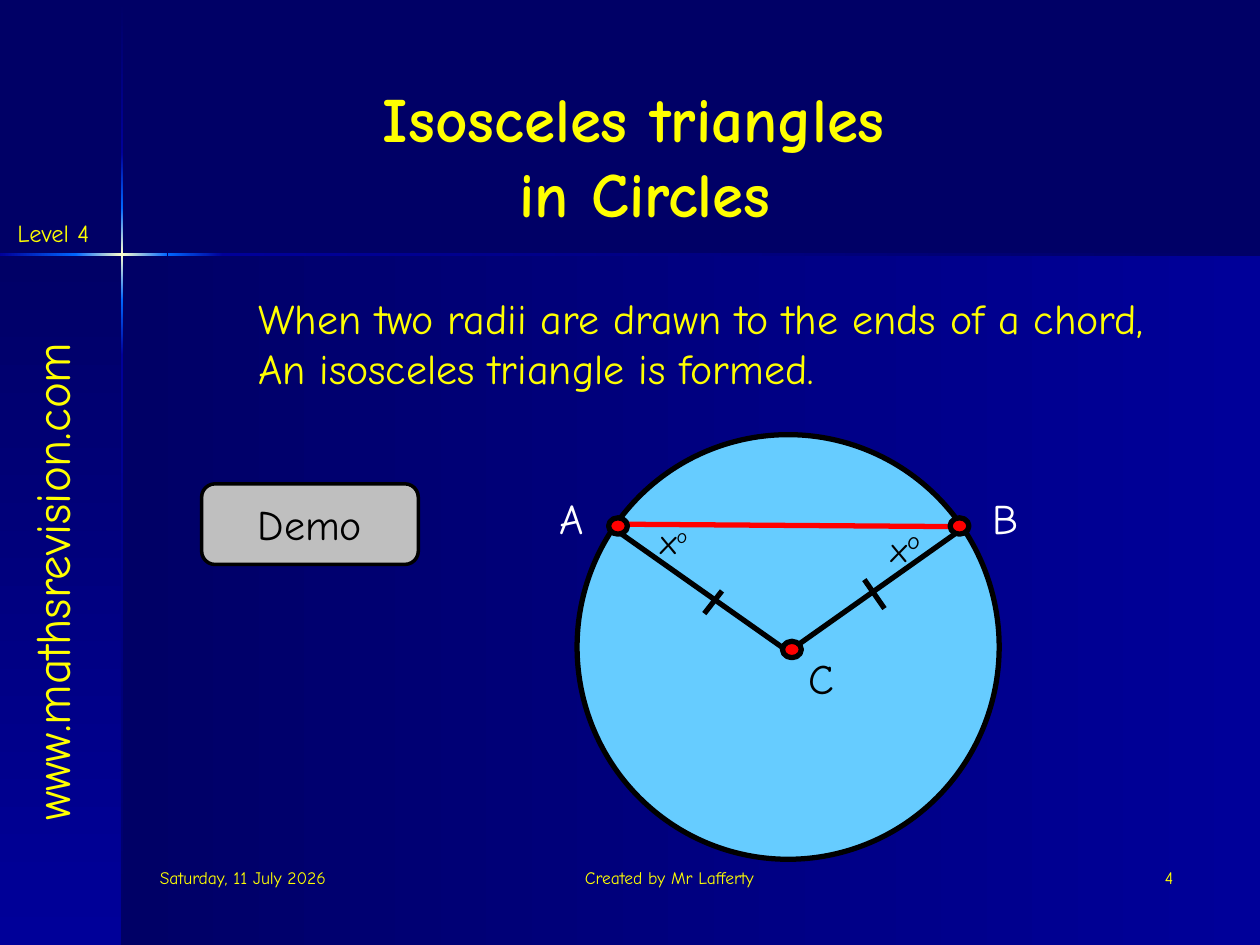
import copy

import pptx
import pptx.dml.color
import pptx.enum.shapes
import pptx.enum.text
import pptx.oxml
import pptx.oxml.ns
import pptx.util
from pptx.util import Inches

FONT = "Comic Neue"
YELLOW, BLACK, WHITE, RED = "FFFF00", "000000", "FFFFFF", "FF0000"
NAVY, BLUE, BRIGHT, GLOW = "000066", "000099", "0066FF", "FFFFCC"
SHAPES = pptx.enum.shapes.MSO_SHAPE
ALIGN = pptx.enum.text.PP_ALIGN
ANCHOR = pptx.enum.text.MSO_ANCHOR
AUTO_SIZE = pptx.enum.text.MSO_AUTO_SIZE


def rgb(value):
    return pptx.dml.color.RGBColor.from_string(value)


def write(shape, text, size, color, align=ALIGN.LEFT, wrap=True, bold=False):
    """Fill a shape with text and format every run alike."""
    frame = shape.text_frame
    frame.text = text
    frame.word_wrap = wrap
    frame.auto_size = AUTO_SIZE.NONE if wrap else AUTO_SIZE.SHAPE_TO_FIT_TEXT
    for para in frame.paragraphs:
        para.alignment = align
        for span in para.runs:
            span.font.name = FONT
            span.font.size = pptx.util.Pt(size)
            span.font.bold = bold
            span.font.color.rgb = rgb(color)


deck = pptx.Presentation()
deck.slide_width, deck.slide_height = Inches(10), Inches(7.5)
page = deck.slides.add_slide(deck.slide_layouts[5])
page.background.fill.solid()
page.background.fill.fore_color.rgb = rgb(NAVY)

# Gradient panels, then the glowing cross: left, top, width, height, angle, colours
ACROSS, DOWN = 0, 90
bands = [
    (0.97, 2.02, 9.03, 5.48, ACROSS, [NAVY, BLUE]),
    (0, 2.02, 0.97, 5.48, DOWN, [NAVY, BLUE]),
    (0.96, 0.01, 0.02, 1.21, DOWN, [NAVY, BLUE]),
    (0.96, 2.82, 0.02, 4.68, DOWN, [BLUE, NAVY]),
    (1.77, 2.01, 8.23, 0.02, ACROSS, [BLUE, NAVY]),
    (0.96, 2.38, 0.02, 0.44, DOWN, [BRIGHT, BLUE]),
    (0.96, 1.21, 0.02, 0.44, DOWN, [BLUE, BRIGHT]),
    (0.96, 1.65, 0.02, 0.73, DOWN, [BRIGHT, GLOW, BRIGHT]),
    (0, 2.01, 0.61, 0.02, ACROSS, [BLUE, BRIGHT]),
    (1.33, 2.01, 0.44, 0.02, ACROSS, [BRIGHT, BLUE]),
    (0.6, 2.01, 0.73, 0.02, ACROSS, [BRIGHT, GLOW, BRIGHT]),
]
for left, top, width, height, angle, colors in bands:
    band = page.shapes.add_shape(
        SHAPES.RECTANGLE, Inches(left), Inches(top), Inches(width), Inches(height))
    band.shadow.inherit = False
    band.line.fill.background()
    band.fill.gradient()
    band.fill.gradient_angle = (360 - angle) % 360
    stops = band._element.spPr.find(".//" + pptx.oxml.ns.qn("a:gsLst"))
    for stop in list(stops):
        stops.remove(stop)
    for index, color in enumerate(colors):
        position = 100000 * index // (len(colors) - 1)
        stops.append(pptx.oxml.parse_xml(
            f'<a:gs {pptx.oxml.ns.nsdecls("a")} pos="{position}">'
            f'<a:srgbClr val="{color}"/></a:gs>'))

# Title
title = page.shapes.title
title.left, title.top = Inches(2.21), Inches(0.41)
title.width, title.height = Inches(5.82), Inches(1.47)
write(title, "Isosceles triangles \vin Circles", 36, YELLOW, ALIGN.CENTER, bold=True)
title.text_frame.vertical_anchor = ANCHOR.BOTTOM
title_para = title.text_frame.paragraphs[0]
for line_break in title_para._p.findall(pptx.oxml.ns.qn("a:br")):
    line_break.insert(0, copy.deepcopy(title_para.runs[0]._r.rPr))

# Circle, chord, radii and equal-length ticks
circle = page.shapes.add_shape(
    SHAPES.OVAL, Inches(4.58), Inches(3.45), Inches(3.35), Inches(3.37))
button = page.shapes.add_shape(
    SHAPES.ROUNDED_RECTANGLE, Inches(1.6), Inches(3.84), Inches(1.72), Inches(0.64))

segments = [
    (4.86, 4.16, 7.66, 4.18, RED),
    (5.73, 4.69, 5.59, 4.87, BLACK),
    (6.86, 4.6, 7.02, 4.83, BLACK),
    (6.26, 5.17, 7.66, 4.18, BLACK),
    (6.24, 5.16, 4.85, 4.18, BLACK),
]
for x1, y1, x2, y2, color in segments:
    segment = page.shapes.add_connector(
        pptx.enum.shapes.MSO_CONNECTOR.STRAIGHT,
        Inches(x1), Inches(y1), Inches(x2), Inches(y2))
    segment.line.color.rgb = rgb(color)
    segment.line.width = pptx.util.Pt(3)
    segment._element.spPr.append(
        pptx.oxml.parse_xml(f'<a:effectLst {pptx.oxml.ns.nsdecls("a")}/>'))

points = [
    page.shapes.add_shape(
        SHAPES.OVAL, Inches(left), Inches(top), Inches(0.15), Inches(0.13))
    for left, top in [(6.21, 5.09), (4.83, 4.11), (7.54, 4.11)]
]

outlined = [(circle, "66CCFF", 3), (button, "BFBFBF", 2)]
outlined += [(point, RED, 3) for point in points]
for shape, color, weight in outlined:
    shape.shadow.inherit = False
    shape.fill.solid()
    shape.fill.fore_color.rgb = rgb(color)
    shape.line.color.rgb = rgb(BLACK)
    shape.line.width = pptx.util.Pt(weight)
write(button, "Demo", 24, BLACK, ALIGN.CENTER)
button.text_frame.vertical_anchor = ANCHOR.MIDDLE

# Labels: left, top, width, height, text, size, colour, alignment, wrap
statement = ("When two radii are drawn to the ends of a chord,\n"
             "An isosceles triangle is formed.")
labels = [
    (0.04, 1.68, 0.85, 0.34, "Level 4", 14, YELLOW, ALIGN.LEFT, False),
    (1.17, 6.83, 2.08, 0.5, "Saturday, 11 July 2026", 10, YELLOW, ALIGN.LEFT, True),
    (3.75, 6.83, 3.17, 0.5, "Created by Mr Lafferty ", 10, YELLOW, ALIGN.CENTER, True),
    (7.33, 6.83, 2.08, 0.5, "4", 10, YELLOW, ALIGN.RIGHT, True),
    (1.95, 2.27, 7.98, 0.9, statement, 24, YELLOW, ALIGN.LEFT, False),
    (6.32, 5.13, 0.4, 0.5, "C", 24, BLACK, ALIGN.LEFT, False),
    (4.34, 3.86, 0.44, 0.5, "A", 24, WHITE, ALIGN.LEFT, False),
    (7.78, 3.86, 0.41, 0.5, "B", 24, WHITE, ALIGN.LEFT, False),
]
for left, top, width, height, *content in labels:
    label = page.shapes.add_textbox(
        Inches(left), Inches(top), Inches(width), Inches(height))
    write(label, *content)

website = page.shapes.add_textbox(
    Inches(-2.02), Inches(4.33), Inches(4.85), Inches(0.57))
website.rotation = 270
write(website, "www.mathsrevision.com", 28, YELLOW, ALIGN.CENTER)

# Base angles, each an x with a raised degree sign
for left, top, width, height, degree_size in [
        (5.14, 4.07, 0.47, 0.44, 20), (6.97, 4.08, 0.48, 0.51, 24)]:
    angle_label = page.shapes.add_textbox(
        Inches(left), Inches(top), Inches(width), Inches(height))
    write(angle_label, "x", 20, BLACK, wrap=False)
    degree = angle_label.text_frame.paragraphs[0].add_run()
    degree.text = "o"
    degree.font.name = FONT
    degree.font.size = pptx.util.Pt(degree_size)
    degree.font.color.rgb = rgb(BLACK)
    degree._r.get_or_add_rPr().set("baseline", "30000")

deck.save("out.pptx")
